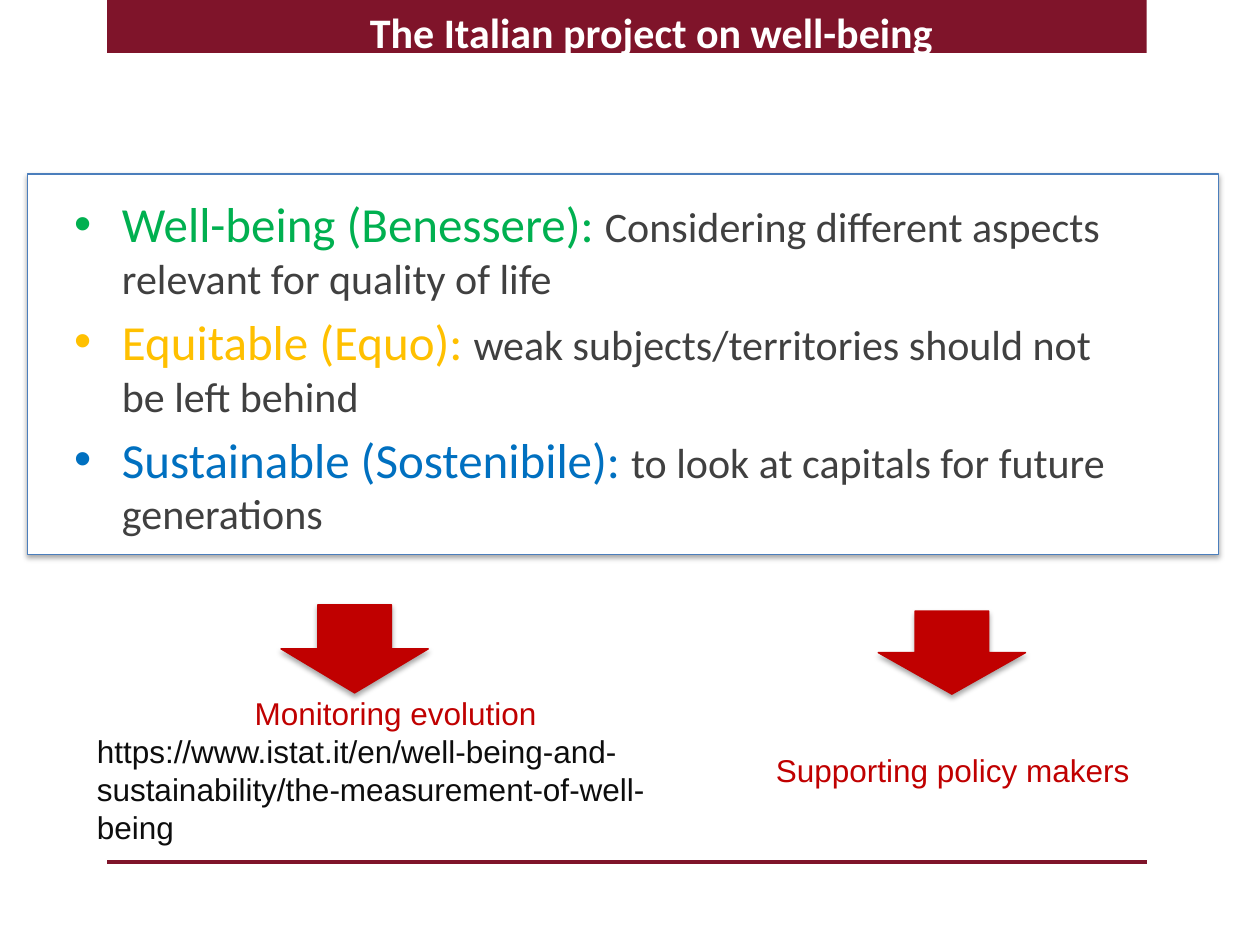
from lxml import etree
from pptx import Presentation
from pptx.dml.color import RGBColor
from pptx.enum.shapes import MSO_CONNECTOR, MSO_SHAPE
from pptx.enum.text import MSO_ANCHOR, MSO_AUTO_SIZE, PP_ALIGN
from pptx.oxml.ns import qn
from pptx.util import Emu, Pt

PX = 9144  # EMU per px, 100 px to the inch
RECT, DOWN_ARROW = MSO_SHAPE.RECTANGLE, MSO_SHAPE.DOWN_ARROW
STRAIGHT = MSO_CONNECTOR.STRAIGHT
TOP = MSO_ANCHOR.TOP
GROW = MSO_AUTO_SIZE.SHAPE_TO_FIT_TEXT
LEFT, CENTER = PP_ALIGN.LEFT, PP_ALIGN.CENTER

MAROON = RGBColor(0x7F, 0x14, 0x2A)
WHITE = RGBColor(0xFF, 0xFF, 0xFF)
BORDER = RGBColor(0x4B, 0x7E, 0xBC)
RED = RGBColor(0xC0, 0x00, 0x00)
GREEN = RGBColor(0x00, 0xB0, 0x50)
AMBER = RGBColor(0xFF, 0xC0, 0x00)
BLUE = RGBColor(0x00, 0x70, 0xC0)
GREY = RGBColor(0x40, 0x40, 0x40)
INK = RGBColor(0x0D, 0x0D, 0x0D)

DIMENSIONS = [
    ("Well-being (Benessere): ", GREEN,
     "Considering different aspects relevant for quality of life"),
    ("Equitable (Equo): ", AMBER,
     "weak subjects/territories should not be left behind"),
    ("Sustainable (Sostenibile): ", BLUE,
     "to look at capitals for future generations"),
]
URL = ("https://www.istat.it/en/well-being-and-sustainability/"
       "the-measurement-of-well-being")


def px(*values):
    return [Emu(v * PX) for v in values]


def add_shadow(sp):
    """Add a soft shadow that falls straight down."""
    effects = sp._element.spPr.find(qn("a:effectLst"))
    shadow = etree.SubElement(effects, qn("a:outerShdw"), blurRad=str(Pt(3.1)),
                              dist=str(Pt(1.8)), dir="5400000", rotWithShape="0")
    color = etree.SubElement(shadow, qn("a:srgbClr"), val="000000")
    etree.SubElement(color, qn("a:alpha"), val="35000")


def add_block(slide, kind, box, fill, line=None):
    """Add a filled shape; an outlined one also casts a shadow."""
    sp = slide.shapes.add_shape(kind, *px(*box))
    sp.fill.solid()
    sp.fill.fore_color.rgb = fill
    sp.shadow.inherit = False
    if line is None:
        sp.line.fill.background()
    else:
        sp.line.color.rgb = line
        sp.line.width = Pt(0.75)
        add_shadow(sp)


def add_text_frame(slide, box):
    tf = slide.shapes.add_textbox(*px(*box)).text_frame
    tf.word_wrap = True
    tf.vertical_anchor = TOP
    return tf


def next_paragraph(tf, index):
    return tf.add_paragraph() if index else tf.paragraphs[0]


def add_run(p, text, size, color, name="Calibri", bold=False):
    r = p.add_run()
    r.text = text
    r.font.size = Pt(size)
    r.font.name = name
    r.font.bold = bold
    r.font.color.rgb = color


def add_bullet(p, indent):
    pPr = p._p.get_or_add_pPr()
    pPr.set("marL", str(indent * PX))
    pPr.set("indent", str(-indent * PX))
    etree.SubElement(pPr, qn("a:buFont"), typeface="Arial")
    etree.SubElement(pPr, qn("a:buChar"), char="•")


def add_frame(slide, left, width, bar_height, rule_y):
    """Add the bar at the top and the rule at the foot."""
    add_block(slide, RECT, (left, 0, width, bar_height), MAROON)
    rule = slide.shapes.add_connector(
        STRAIGHT, *px(left, rule_y, left + width, rule_y))
    rule.line.color.rgb = MAROON
    rule.line.width = Pt(2)
    etree.SubElement(rule._element.spPr, qn("a:effectLst"))


def add_title(slide, box, text):
    p = add_text_frame(slide, box).paragraphs[0]
    p.alignment = CENTER
    add_run(p, text, 24, WHITE, bold=True)


def add_dimensions(slide, box):
    """Add the panel with one bullet for each dimension."""
    left, top, _, _ = box
    add_block(slide, RECT, box, WHITE, BORDER)
    tf = add_text_frame(slide, (left + 27, top + 11, 850, 500))
    for i, (term, color, meaning) in enumerate(DIMENSIONS):
        p = next_paragraph(tf, i)
        add_bullet(p, 38)
        if i:
            p.space_before = Pt(4.8)
        add_run(p, term, 28, color)
        add_run(p, meaning, 24, GREY)


def add_outcome(slide, arrow_box, text_box, lines):
    """Add a down arrow and the lines of text under it."""
    add_block(slide, DOWN_ARROW, arrow_box, RED, RED)
    tf = add_text_frame(slide, text_box)
    tf.auto_size = GROW
    for i, (text, color, align) in enumerate(lines):
        p = next_paragraph(tf, i)
        p.alignment = align
        add_run(p, text, 18, color, "Arial")


def main():
    prs = Presentation()
    prs.slide_width, prs.slide_height = px(1000, 750)
    slide = prs.slides.add_slide(prs.slide_layouts[6])
    add_frame(slide, 85, 825, 42, 684)
    add_title(slide, (67, 0, 900, 60), "The Italian project on well-being")
    add_dimensions(slide, (22, 138, 945, 302))
    add_outcome(slide, (223, 480, 117, 70), (67, 546, 494, 131),
                [("Monitoring evolution", RED, CENTER), (URL, INK, LEFT)])
    add_outcome(slide, (697, 485, 117, 66), (606, 591, 356, 40),
                [("Supporting policy makers", RED, LEFT)])
    prs.save("out.pptx")


if __name__ == "__main__":
    main()
